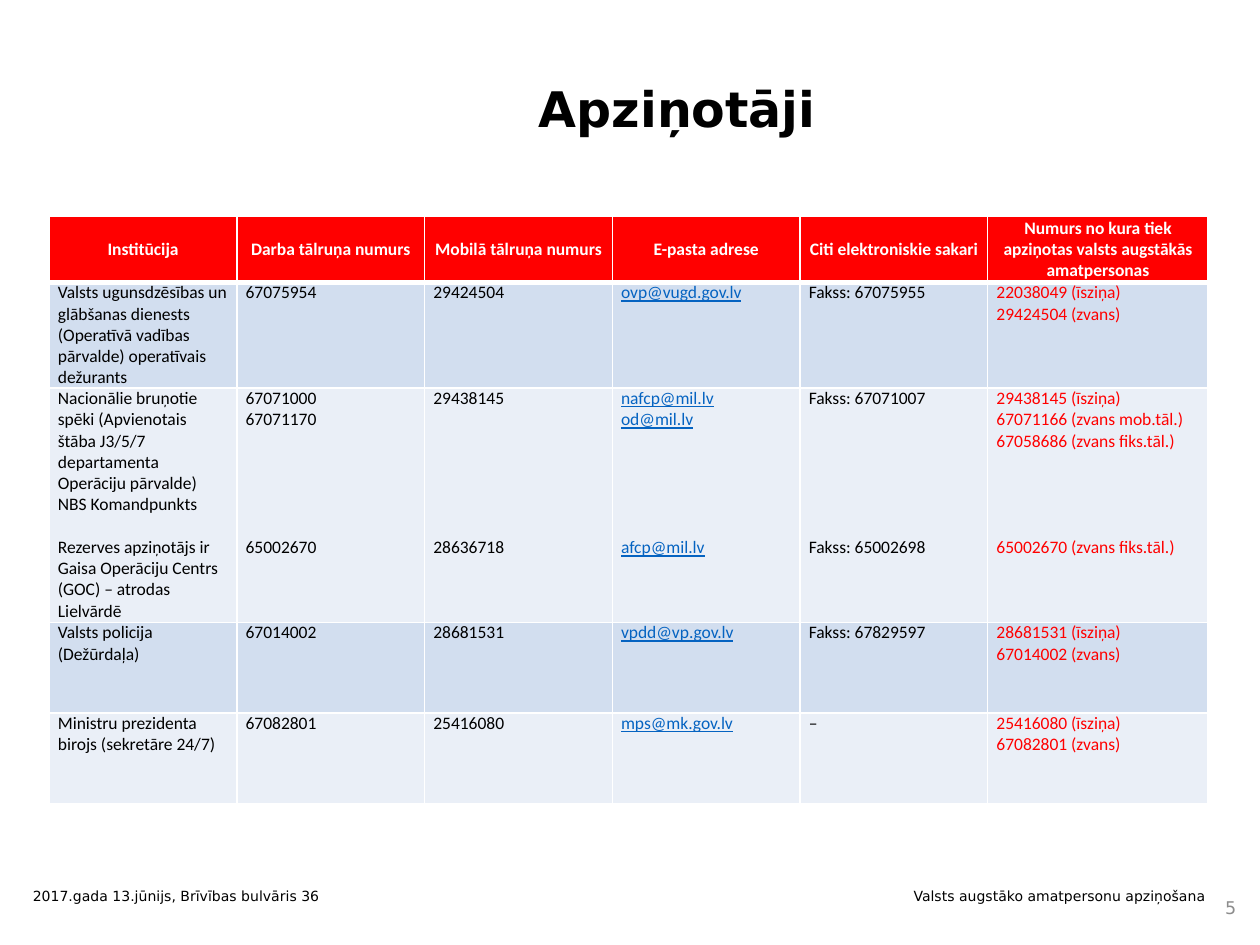
import pptx
import pptx.util
import pptx.dml.color
import pptx.enum.text
import pptx.oxml
import pptx.oxml.ns

Inches = pptx.util.Inches
Pt = pptx.util.Pt
RGB = pptx.dml.color.RGBColor
ALIGN = pptx.enum.text.PP_ALIGN
ANCHOR = pptx.enum.text.MSO_ANCHOR
NS = pptx.oxml.ns.nsdecls("a")

BLACK = RGB(0x00, 0x00, 0x00)
WHITE = RGB(0xFF, 0xFF, 0xFF)
RED = RGB(0xFF, 0x00, 0x00)
BLUE = RGB(0x05, 0x63, 0xC1)
GRAY = RGB(0x8C, 0x8C, 0x8C)
BANDS = (RGB(0xD2, 0xDE, 0xEF), RGB(0xEA, 0xEF, 0xF7))

TITLE = "Apziņotāji"
PAGE = "5"
FOOT = "2017.gada 13.jūnijs, Brīvības bulvāris 36\tValsts augstāko amatpersonu apziņošana"
HEAD = ("Institūcija", "Darba tālruņa numurs", "Mobilā tālruņa numurs",
        "E-pasta adrese", "Citi elektroniskie sakari",
        "Numurs no kura tiek apziņotas valsts augstākās amatpersonas")
BODY = [
    (["Valsts ugunsdzēsības un glābšanas dienests (Operatīvā vadības pārvalde) operatīvais dežurants"],
     ["67075954"], ["29424504"], ["ovp@vugd.gov.lv"], ["Fakss: 67075955"],
     ["22038049 (īsziņa)", "29424504 (zvans)"]),
    (["Nacionālie bruņotie spēki (Apvienotais štāba J3/5/7 departamenta Operāciju pārvalde) NBS Komandpunkts",
      "Rezerves apziņotājs ir Gaisa Operāciju Centrs (GOC) – atrodas Lielvārdē"],
     ["67071000", "67071170", "65002670"],
     ["29438145", "28636718"],
     ["nafcp@mil.lv", "od@mil.lv", "afcp@mil.lv"],
     ["Fakss: 67071007", "Fakss: 65002698"],
     ["29438145 (īsziņa)", "67071166 (zvans mob.tāl.)",
      "67058686 (zvans fiks.tāl.)", "65002670 (zvans fiks.tāl.)"]),
    (["Valsts policija (Dežūrdaļa)"], ["67014002"], ["28681531"],
     ["vpdd@vp.gov.lv"], ["Fakss: 67829597"],
     ["28681531 (īsziņa)", "67014002 (zvans)"]),
    (["Ministru prezidenta birojs (sekretāre 24/7)"], ["67082801"], ["25416080"],
     ["mps@mk.gov.lv"], ["–"],
     ["25416080 (īsziņa)", "67082801 (zvans)"]),
]
SPLIT = 1
GAPS = (1, 5, 6, 5, 6, 4)
LINE = 12.2
WIDTHS = [1.49] * 5 + [1.75]
HEIGHTS = [0.52, 0.84, 1.86, 0.72, 0.72]

CELL = {"name": "Calibri", "size": Pt(10)}
TOP = {**CELL, "bold": True}
LINK = {**CELL, "underline": True}
SANS = {"name": "DejaVu Sans"}


def style(par, look, color, align):
    par.alignment = align
    for run in par.runs:
        for key, val in look.items():
            setattr(run.font, key, val)
        run.font.color.rgb = color


def label(slide, text, place, look, color, align, frame):
    box = slide.shapes.add_textbox(*map(Inches, place)).text_frame
    for key, val in {"word_wrap": True, **frame}.items():
        setattr(box, key, val)
    par = box.paragraphs[0]
    par.text = text
    style(par, {**SANS, **look}, color, align)
    return par


def border(cell, row):
    sides = {"L": 1, "R": 1, "T": 3 if row == 1 else 1, "B": 3 if row == 0 else 1}
    props = cell._tc.get_or_add_tcPr()
    for spot, (side, width) in enumerate(sides.items()):
        props.insert(spot, pptx.oxml.parse_xml(
            f'<a:ln{side} {NS} w="{Pt(width)}"><a:solidFill>'
            f'<a:srgbClr val="{WHITE}"/></a:solidFill></a:ln{side}>'))


def fill(cell, lines, back, look, color, align, anchor):
    form = {"margin_left": Inches(0.07), "margin_right": Inches(0.07),
            "margin_top": 0, "margin_bottom": 0, "vertical_anchor": anchor}
    for key, val in form.items():
        setattr(cell, key, val)
    cell.fill.solid()
    cell.fill.fore_color.rgb = back
    cell.text = "\n".join(lines)
    for par in cell.text_frame.paragraphs:
        style(par, look, color, align)


def grid(slide):
    place = (0.39, 1.72, sum(WIDTHS), sum(HEIGHTS))
    table = slide.shapes.add_table(len(HEIGHTS), len(WIDTHS), *map(Inches, place)).table
    for col, width in zip(table.columns, WIDTHS):
        col.width = Inches(width)
    for row, height in zip(table.rows, HEIGHTS):
        row.height = Inches(height)
    for col, text in enumerate(HEAD):
        cell = table.cell(0, col)
        fill(cell, [text], RED, TOP, WHITE, ALIGN.CENTER, ANCHOR.MIDDLE)
        border(cell, 0)
    looks = {3: (LINK, BLUE), 5: (CELL, RED)}
    for row, items in enumerate(BODY):
        for col, lines in enumerate(items):
            cell = table.cell(row + 1, col)
            look, color = looks.get(col, (CELL, BLACK))
            fill(cell, lines, BANDS[row % 2], look, color, ALIGN.LEFT, ANCHOR.TOP)
            border(cell, row + 1)
            if row == SPLIT:
                cell.text_frame.paragraphs[-1].space_before = Pt(GAPS[col] * LINE)


def main():
    deck = pptx.Presentation()
    deck.slide_width, deck.slide_height = Inches(10), Inches(7.5)
    slide = deck.slides.add_slide(deck.slide_layouts[6])
    middle = {"vertical_anchor": ANCHOR.MIDDLE}
    head = label(slide, TITLE, (2.6, 0.4, 5.55, 0.97),
                 {"size": Pt(28), "bold": True}, BLACK, ALIGN.CENTER, middle)
    head.line_spacing = 0.9
    label(slide, PAGE, (7.09, 7.07, 2.82, 0.27),
          {"size": Pt(10)}, GRAY, ALIGN.RIGHT, middle)
    grid(slide)
    foot = label(slide, FOOT, (0.09, 7.02, 9.59, 0.29), {"size": Pt(8)}, BLACK,
                 ALIGN.LEFT, {"margin_left": Inches(0.17), "margin_top": Inches(0.02)})
    foot._p.get_or_add_pPr().append(pptx.oxml.parse_xml(
        f'<a:tabLst {NS}><a:tab pos="{Inches(9.31)}" algn="r"/></a:tabLst>'))
    deck.save("out.pptx")


if __name__ == "__main__":
    main()
